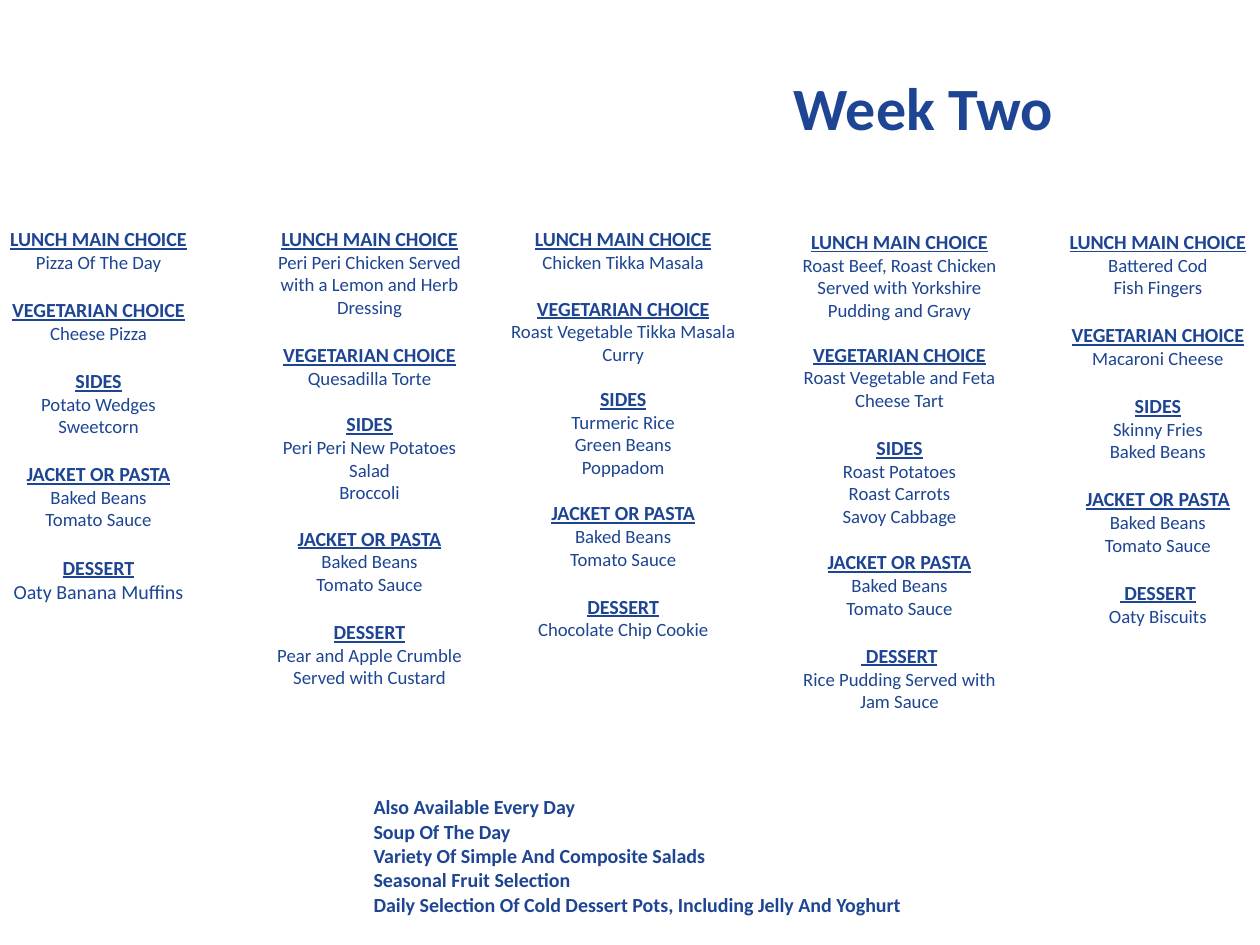
from dataclasses import dataclass

from pptx import Presentation
from pptx.dml.color import RGBColor
from pptx.enum.text import MSO_ANCHOR, PP_ALIGN
from pptx.util import Pt

CENTER = PP_ALIGN.CENTER
TOP = MSO_ANCHOR.TOP


@dataclass
class Theme:
    font: str = "Calibri"
    blue: RGBColor = RGBColor(0x1D, 0x45, 0x93)
    title: int = 48
    heading: int = 16
    dish: int = 15
    line: float = 1.22  # line height relative to type size


theme = Theme()


def style(p, size, bold=False, underline=False):
    for r in p.runs:
        r.font.name = theme.font
        r.font.size = Pt(size)
        r.font.bold = bold
        r.font.underline = underline
        r.font.color.rgb = theme.blue


def add_panel(s, left, top, width, height, lines, size, margin_top):
    """One-cell table with left-aligned bold lines."""
    table = s.shapes.add_table(1, 1, Pt(left), Pt(top), Pt(width), Pt(height)).table
    table.first_row = False
    table.horz_banding = False
    cell = table.cell(0, 0)
    cell.fill.background()
    cell.vertical_anchor = TOP
    cell.margin_top = Pt(margin_top)
    cell.text_frame.text = "\n".join(lines)
    for p in cell.text_frame.paragraphs:
        style(p, size, bold=True)


prs = Presentation()
prs.slide_width, prs.slide_height = Pt(1008), Pt(756)
s = prs.slides.add_slide(prs.slide_layouts[6])

# Menu: left, top, width, height, gap sizes before headings 2 to 5, sections
jacket = ("JACKET OR PASTA", "Baked Beans", "Tomato Sauce")
menu = [
    (-13, 177.8, 183.6, 329.8, (16, 16, 16, 16), [
        ("LUNCH MAIN CHOICE", "Pizza Of The Day"),
        ("VEGETARIAN CHOICE", "Cheese Pizza"),
        ("SIDES", "Potato Wedges", "Sweetcorn"),
        jacket,
        ("DESSERT", "Oaty Banana Muffins")]),
    (203.8, 177.8, 183.6, 379.4, (16, 15, 15, 16), [
        ("LUNCH MAIN CHOICE", "Peri Peri Chicken Served with a Lemon and Herb Dressing"),
        ("VEGETARIAN CHOICE", "Quesadilla Torte"),
        ("SIDES", "Peri Peri New Potatoes", "Salad", "Broccoli"),
        jacket,
        ("DESSERT", "Pear and Apple Crumble Served with Custard")]),
    (401, 177.8, 195.1, 342, (15, 14, 15, 16), [
        ("LUNCH MAIN CHOICE", "Chicken Tikka Masala"),
        ("VEGETARIAN CHOICE", "Roast Vegetable Tikka Masala Curry"),
        ("SIDES", "Turmeric Rice", "Green Beans", "Poppadom"),
        jacket,
        ("DESSERT", "Chocolate Chip Cookie")]),
    (627.8, 180, 183.6, 396, (14, 16, 15, 16), [
        ("LUNCH MAIN CHOICE",
         "Roast Beef, Roast Chicken Served with Yorkshire Pudding and Gravy"),
        ("VEGETARIAN CHOICE", "Roast Vegetable and Feta Cheese Tart"),
        ("SIDES", "Roast Potatoes", "Roast Carrots", "Savoy Cabbage"),
        jacket,
        (" DESSERT", "Rice Pudding Served with Jam Sauce")]),
    (834.5, 180, 183.6, 326.9, (16, 16, 16, 16), [
        ("LUNCH MAIN CHOICE", "Battered Cod", "Fish Fingers"),
        ("VEGETARIAN CHOICE", "Macaroni Cheese"),
        ("SIDES", "Skinny Fries", "Baked Beans"),
        jacket,
        (" DESSERT", "Oaty Biscuits")]),
]

# Day columns
for left, top, width, height, gaps, sections in menu:
    tf = s.shapes.add_textbox(Pt(left), Pt(top), Pt(width), Pt(height)).text_frame
    tf.word_wrap = True
    tf.text = "\n".join(line for section in sections for line in section)
    paragraphs = iter(tf.paragraphs)
    for gap, section in zip((0, *gaps), sections):
        for i, line in enumerate(section):
            p = next(paragraphs)
            p.alignment = CENTER
            if i == 0:
                style(p, theme.heading, bold=True, underline=True)
                if gap:
                    p.space_before = Pt(round(gap * theme.line, 1))
            else:
                # The muffins are set at heading size
                large = line == "Oaty Banana Muffins"
                style(p, theme.heading if large else theme.dish)

# Week title
add_panel(s, 627.8, 54.7, 282.2, 64.8, ["Week Two"], theme.title, 3.6)

# Daily extras, starting one line down
add_panel(s, 291.6, 613.4, 671.8, 122.4, [
    "Also Available Every Day",
    "Soup Of The Day",
    "Variety Of Simple And Composite Salads",
    "Seasonal Fruit Selection",
    "Daily Selection Of Cold Dessert Pots, Including Jelly And Yoghurt",
], theme.heading, 23.1)

prs.save("out.pptx")
